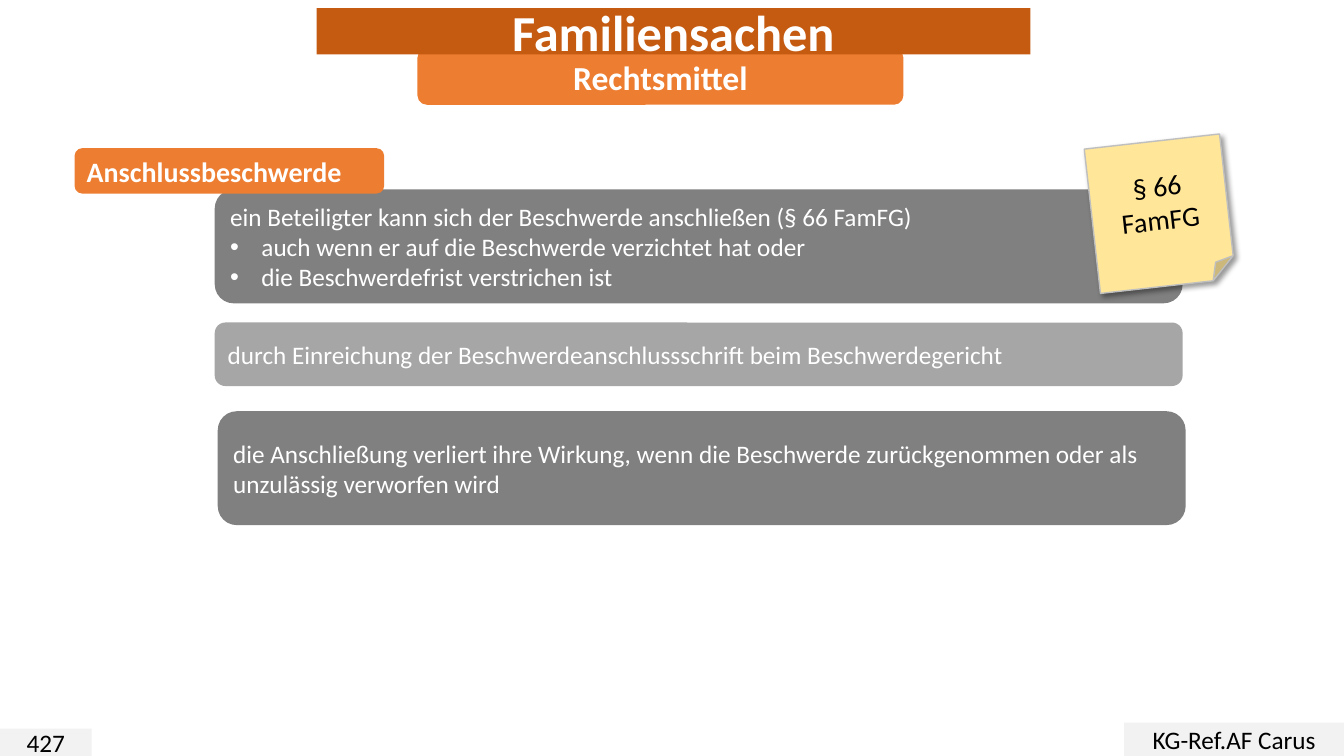
from lxml import etree
from pptx import Presentation
from pptx.dml.color import RGBColor
from pptx.enum.shapes import MSO_SHAPE
from pptx.enum.text import MSO_ANCHOR, MSO_AUTO_SIZE, PP_ALIGN
from pptx.oxml import parse_xml
from pptx.oxml.ns import qn
from pptx.util import Inches, Pt

ROUNDED = MSO_SHAPE.ROUNDED_RECTANGLE
RECTANGLE = MSO_SHAPE.RECTANGLE
FOLDED = MSO_SHAPE.FOLDED_CORNER
LEFT, CENTER = PP_ALIGN.LEFT, PP_ALIGN.CENTER
MIDDLE = MSO_ANCHOR.MIDDLE
NO_AUTOFIT = MSO_AUTO_SIZE.NONE

WHITE = RGBColor(0xFF, 0xFF, 0xFF)
BLACK = RGBColor(0x00, 0x00, 0x00)
DARK_GRAY = RGBColor(0x80, 0x80, 0x80)
MID_GRAY = RGBColor(0xA6, 0xA6, 0xA6)
EDGE_GRAY = RGBColor(0xBF, 0xBF, 0xBF)
PALE_GRAY = RGBColor(0xF2, 0xF2, 0xF2)
ORANGE = RGBColor(0xED, 0x7D, 0x31)
RUST = RGBColor(0xC5, 0x5A, 0x11)
YELLOW = RGBColor(0xFF, 0xE6, 0x99)

DRAWING = "http://schemas.openxmlformats.org/drawingml/2006/main"
NOTE_SHADOW = (
    f'<a:effectLst xmlns:a="{DRAWING}">'
    f'<a:outerShdw blurRad="{Pt(4)}" dist="{Pt(3)}" dir="2700000" algn="tl" rotWithShape="0">'
    '<a:srgbClr val="000000"><a:alpha val="40000"/></a:srgbClr>'
    "</a:outerShdw></a:effectLst>"
)
ROUNDED_OUTLINE = f'<a:prstGeom xmlns:a="{DRAWING}" prst="roundRect"><a:avLst/></a:prstGeom>'


def write(frame, text, size=18, color=WHITE, bold=False, align=LEFT, bullets=()):
    frame.word_wrap = True
    frame.auto_size = NO_AUTOFIT
    frame.vertical_anchor = MIDDLE
    for index, line in enumerate([text, *bullets]):
        para = frame.add_paragraph() if index else frame.paragraphs[0]
        para.alignment = align
        if index:
            properties = para._p.get_or_add_pPr()
            properties.set("marL", str(Inches(0.31)))
            properties.set("indent", str(-Inches(0.31)))
            etree.SubElement(properties, qn("a:buFont"), typeface="Arial")
            etree.SubElement(properties, qn("a:buChar"), char="•")
        span = para.add_run()
        span.text = line
        span.font.name = "Calibri"
        span.font.size = Pt(size)
        span.font.bold = bold
        span.font.color.rgb = color


class SlideBuilder:
    def __init__(self, page):
        self.page = page

    def box(self, left, top, width, height, fill, text, kind=ROUNDED, **style):
        box = self.page.shapes.add_shape(
            kind, Inches(left), Inches(top), Inches(width), Inches(height))
        box.shadow.inherit = False
        box.fill.solid()
        box.fill.fore_color.rgb = fill
        box.line.fill.background()
        write(box.text_frame, text, **style)
        return box

    def title(self, left, top, width, height, fill, text, **style):
        title = self.page.shapes.title
        title.left, title.top = Inches(left), Inches(top)
        title.width, title.height = Inches(width), Inches(height)
        title.element.spPr.append(parse_xml(ROUNDED_OUTLINE))
        title.fill.solid()
        title.fill.fore_color.rgb = fill
        write(title.text_frame, text, **style)
        return title

    def footer(self, left, top, width, height, text):
        self.box(left, top, width, height, PALE_GRAY, text,
                 kind=RECTANGLE, color=BLACK, align=CENTER)

    def sticky_note(self, left, top, width, height, text):
        note = self.box(left, top, width, height, YELLOW, text,
                        kind=FOLDED, size=20, color=BLACK, align=CENTER)
        note.rotation = 353.6
        note.line.color.rgb = EDGE_GRAY
        note.line.width = Pt(1)
        properties = note.element.spPr
        properties.replace(properties.find(qn("a:effectLst")), parse_xml(NOTE_SHADOW))


def main():
    deck = Presentation()
    deck.slide_width, deck.slide_height = Inches(13.33), Inches(7.5)
    page = deck.slides.add_slide(deck.slide_layouts[5])
    builder = SlideBuilder(page)

    builder.box(2.16, 4.08, 9.6, 1.13, DARK_GRAY,
                "die Anschließung verliert ihre Wirkung, wenn die Beschwerde "
                "zurückgenommen oder als unzulässig verworfen wird")
    builder.box(2.13, 3.2, 9.6, 0.63, MID_GRAY,
                "durch Einreichung der Beschwerdeanschlussschrift beim Beschwerdegericht")
    builder.box(2.13, 1.88, 9.6, 1.13, DARK_GRAY,
                "ein Beteiligter kann sich der Beschwerde anschließen (§ 66 FamFG)",
                bullets=["auch wenn er auf die Beschwerde verzichtet hat oder",
                         "die Beschwerdefrist verstrichen ist"])
    subtitle = builder.box(4.14, 0.48, 4.82, 0.56, ORANGE, "Rechtsmittel",
                           size=24, bold=True, align=CENTER)
    title = builder.title(3.14, 0.08, 7.08, 0.46, RUST, "Familiensachen",
                          size=36, color=WHITE, bold=True, align=CENTER)
    subtitle.element.addnext(title.element)

    builder.footer(0, 7.23, 0.91, 0.27, "427")
    builder.footer(11.15, 7.17, 2.18, 0.33, "KG-Ref.AF Carus")
    builder.box(0.74, 1.47, 3.07, 0.45, ORANGE, "Anschlussbeschwerde", size=20, bold=True)
    builder.sticky_note(10.83, 1.4, 1.35, 1.44, "§ 66 FamFG")

    deck.save("out.pptx")


if __name__ == "__main__":
    main()
